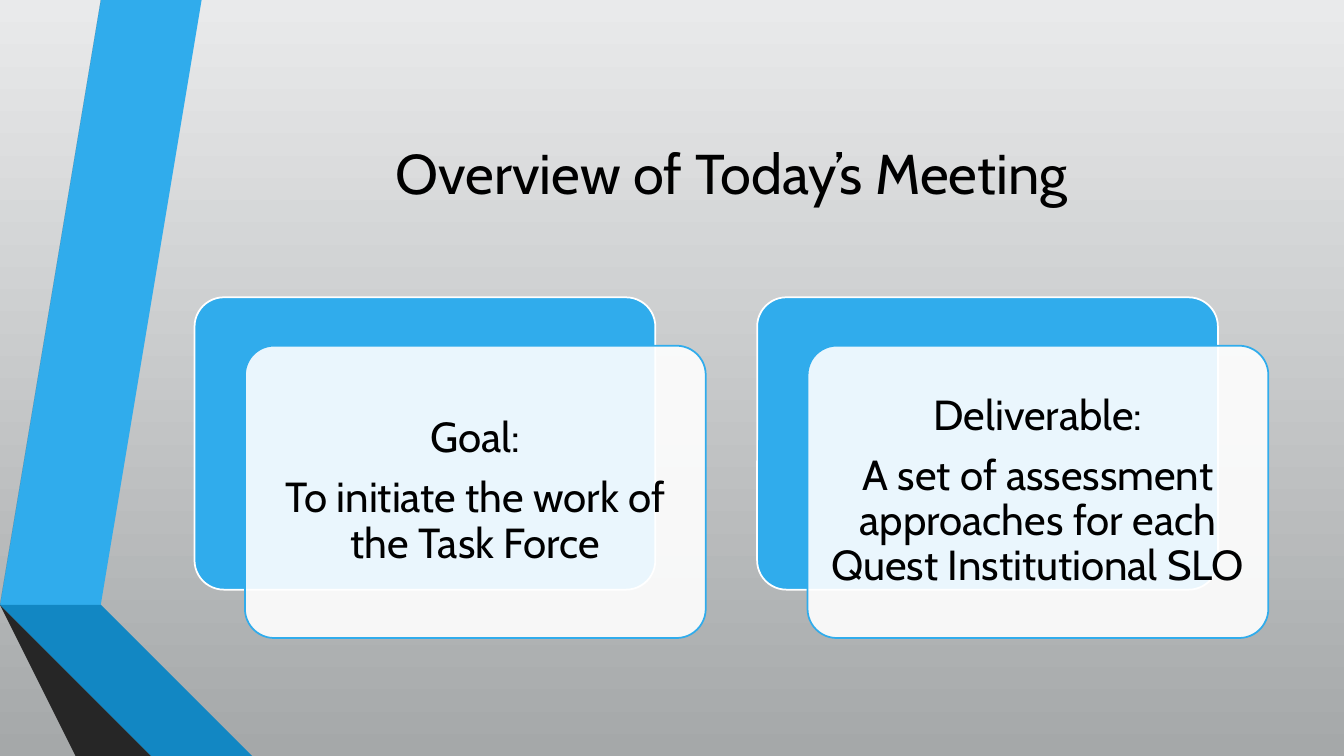
"""Build the meeting overview slide with its goal and deliverable cards."""
from lxml import etree
from pptx import Presentation
from pptx.dml.color import RGBColor
from pptx.enum import shapes, text
from pptx.oxml import ns
from pptx.util import Inches, Pt

FONT = "Cabin"
BLUE, WHITE, BLACK = "30ACEC", "FFFFFF", "000000"
BACKGROUND = ["E9EAEB", "A5A8A9"]
TITLE = "Overview of Today’s Meeting"
CARDS = [
    ["Goal:", "To initiate the work of the Task Force"],
    ["Deliverable:", "A set of assessment approaches for each Quest Institutional SLO"],
]
RIBBONS = [
    (BLUE, [(0.5, 5.78), (0.77, 5.83), (1.73, 0), (1.45, 0)]),
    ("595959", [(1.39, 0), (1.11, 0), (0.16, 5.73), (0.44, 5.77)]),
    ("262626", [(0.16, 5.73), (1.45, 7.5), (1.51, 7.5)]),
    ("0C5A82", [(0.5, 5.79), (2.08, 7.5), (2.14, 7.5)]),
    ("1287C3", [(0.5, 5.79), (2.14, 7.5), (2.83, 7.5), (0.77, 5.83), (0.5, 5.78)]),
    ("404040", [(2.02, 7.5), (0.48, 5.83), (0.43, 5.77), (0.16, 5.73), (1.51, 7.5)]),
]
LEFT, TOP = 1.93, 2.95
CARD_WIDTH, CARD_HEIGHT, CARD_STEP = 4.57, 2.9, 5.58
SHIFT_X, SHIFT_Y = 0.5, 0.48


def color(value):
    return RGBColor.from_string(value)


def paint(part, fill, line=None):
    part.shadow.inherit = False
    part.fill.solid()
    part.fill.fore_color.rgb = color(fill)
    if line:
        part.line.color.rgb = color(line)
        part.line.width = Pt(1.25)
    else:
        part.line.fill.background()


def write(frame, lines, size):
    frame.word_wrap = True
    frame.auto_size = text.MSO_AUTO_SIZE.NONE
    frame.vertical_anchor = text.MSO_ANCHOR.MIDDLE
    frame.text = "\n".join(lines)
    for paragraph in frame.paragraphs:
        paragraph.alignment = text.PP_ALIGN.CENTER
        paragraph.font.name = FONT
        paragraph.font.size = Pt(size)
        paragraph.font.color.rgb = color(BLACK)


def add_panel(slide, left, top, fill, line):
    panel = slide.shapes.add_shape(
        shapes.MSO_SHAPE.ROUNDED_RECTANGLE,
        Inches(left), Inches(top), Inches(CARD_WIDTH), Inches(CARD_HEIGHT))
    panel.adjustments[0] = 0.1
    paint(panel, fill, line)
    return panel


def add_card(slide, left, lines):
    add_panel(slide, left, TOP, BLUE, WHITE)
    front = add_panel(slide, left + SHIFT_X, TOP + SHIFT_Y, WHITE, BLUE)
    tint = front.fill._xPr.find(ns.qn("a:solidFill"))[0]
    etree.SubElement(tint, ns.qn("a:alpha"), val="90000")
    frame = front.text_frame
    frame.margin_left = frame.margin_right = Inches(0.12)
    frame.margin_top = frame.margin_bottom = Inches(0.12)
    write(frame, lines, 30)
    for paragraph in frame.paragraphs:
        paragraph.line_spacing = 0.9
        paragraph.space_after = Pt(10.5)


def main():
    deck = Presentation()
    deck.slide_width, deck.slide_height = Inches(13.33), Inches(7.5)
    slide = deck.slides.add_slide(deck.slide_layouts[5])

    backdrop = slide.background.fill
    backdrop.gradient()
    backdrop.gradient_angle = 270
    for stop, shade in zip(backdrop.gradient_stops, BACKGROUND):
        stop.color.rgb = color(shade)

    for fill, points in RIBBONS:
        outline = slide.shapes.build_freeform(*points[0], scale=Inches(1))
        outline.add_line_segments(points[1:], close=True)
        paint(outline.convert_to_shape(), fill)

    title = slide.shapes.title
    title.left, title.top = Inches(LEFT), Inches(0.75)
    title.width, title.height = Inches(10.65), Inches(1.92)
    write(title.text_frame, [TITLE], 40)

    for index, lines in enumerate(CARDS):
        add_card(slide, LEFT + index * CARD_STEP, lines)

    deck.save("out.pptx")


if __name__ == "__main__":
    main()
